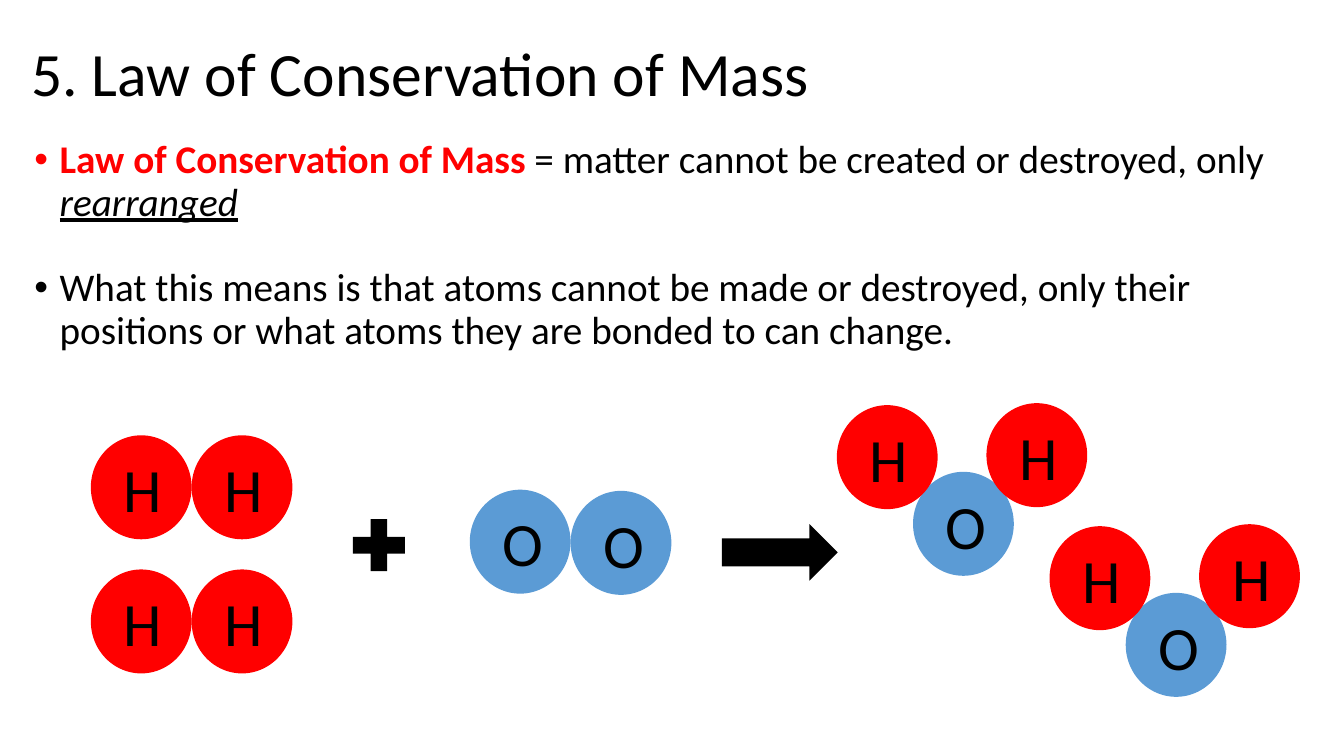
"""Build the slide on the law of conservation of mass."""
from lxml.etree import SubElement
from pptx import Presentation
from pptx.dml.color import RGBColor
from pptx.enum.shapes import MSO_SHAPE as Shape
from pptx.enum.text import MSO_ANCHOR as Anchor, MSO_AUTO_SIZE as AutoSize, PP_ALIGN as Align
from pptx.oxml.ns import qn
from pptx.util import Cm, Pt

COLORS = {"red": "FF0000", "blue": "5B9BD5", "black": "000000"}
FONT = "Calibri"

TITLE = "5. Law of Conservation of Mass"
BULLETS = [
    (10, [
        ("Law of Conservation of Mass ", "red", "bold"),
        ("= matter cannot be created or destroyed, only ", "black", ""),
        ("rearranged", "black", "italic underline"),
    ]),
    (31, [
        ("What this means is that atoms cannot be made or destroyed, only their "
         "positions or what atoms they are bonded to can change.", "black", ""),
    ]),
]

ATOM_COLORS = {"H": "red", "O": "blue"}
ATOM_WIDTH, ATOM_HEIGHT = 2.54, 2.62
HYDROGEN = [("H", 0, 0), ("H", ATOM_WIDTH, 0)]
OXYGEN = [("O", 0, 0), ("O", ATOM_WIDTH, 0.03)]
WATER = [("O", 0, 0), ("H", 1.85, -1.73), ("H", -1.92, -1.68)]
MOLECULES = [
    (HYDROGEN, 2.29, 10.97),
    (OXYGEN, 11.84, 12.34),
    (HYDROGEN, 2.29, 14.35),
    (WATER, 23.01, 11.89),
    (WATER, 28.37, 14.94),
]
SIGNS = [
    (Shape.MATH_PLUS, 8.66, 12.85, 1.78, 1.78),
    (Shape.RIGHT_ARROW, 18.19, 13.21, 2.92, 1.42),
]


def place(shape, left, top, width, height):
    shape.left, shape.top = Cm(left), Cm(top)
    shape.width, shape.height = Cm(width), Cm(height)


def style(span, size, color="black", effects=""):
    font = span.font
    font.name, font.size = FONT, Pt(size)
    font.color.rgb = RGBColor.from_string(COLORS[color])
    font.bold = "bold" in effects
    font.italic = "italic" in effects
    font.underline = "underline" in effects


def add_filled(shapes, kind, color, left, top, width, height):
    shape = shapes.add_shape(kind, Cm(left), Cm(top), Cm(width), Cm(height))
    shape.shadow.inherit = False
    shape.fill.solid()
    shape.fill.fore_color.rgb = RGBColor.from_string(COLORS[color])
    shape.line.fill.background()


def add_atom(shapes, symbol, left, top):
    add_filled(shapes, Shape.OVAL, ATOM_COLORS[symbol], left, top, ATOM_WIDTH, ATOM_HEIGHT)
    box = shapes.add_textbox(Cm(left + 0.58), Cm(top + 0.27), Cm(2.67), Cm(2.13))
    frame = box.text_frame
    frame.word_wrap = True
    frame.text = symbol
    style(frame.paragraphs[0].runs[0], 44)


def add_title(slide):
    title = slide.shapes.title
    place(title, 0.53, 0.1, 29.21, 3.68)
    frame = title.text_frame
    frame.text = TITLE
    frame.auto_size = AutoSize.NONE
    frame.vertical_anchor = Anchor.MIDDLE
    para = frame.paragraphs[0]
    para.alignment, para.line_spacing = Align.LEFT, 0.9
    style(para.runs[0], 44)


def add_bullets(slide):
    body = slide.placeholders[1]
    place(body, 0.61, 3.4, 32.89, 6.78)
    frame = body.text_frame
    frame.auto_size = AutoSize.NONE
    frame.vertical_anchor = Anchor.TOP
    for index, (space, spans) in enumerate(BULLETS):
        para = frame.add_paragraph() if index else frame.paragraphs[0]
        para.line_spacing, para.space_before = 0.9, Pt(space)
        properties = para._p.get_or_add_pPr()
        properties.set("marL", str(Cm(0.64)))
        properties.set("indent", str(-Cm(0.64)))
        SubElement(properties, qn("a:buFont"), typeface="Arial")
        SubElement(properties, qn("a:buChar"), char="•")
        for text, color, effects in spans:
            span = para.add_run()
            span.text = text
            style(span, 28, color, effects)


def main():
    deck = Presentation()
    deck.slide_width, deck.slide_height = Cm(33.87), Cm(19.05)
    slide = deck.slides.add_slide(deck.slide_layouts[1])
    add_title(slide)
    add_bullets(slide)
    for atoms, left, top in MOLECULES:
        molecule = slide.shapes.add_group_shape()
        for symbol, across, down in atoms:
            add_atom(molecule.shapes, symbol, left + across, top + down)
    for kind, *frame in SIGNS:
        add_filled(slide.shapes, kind, "black", *frame)
    deck.save("out.pptx")


if __name__ == "__main__":
    main()
